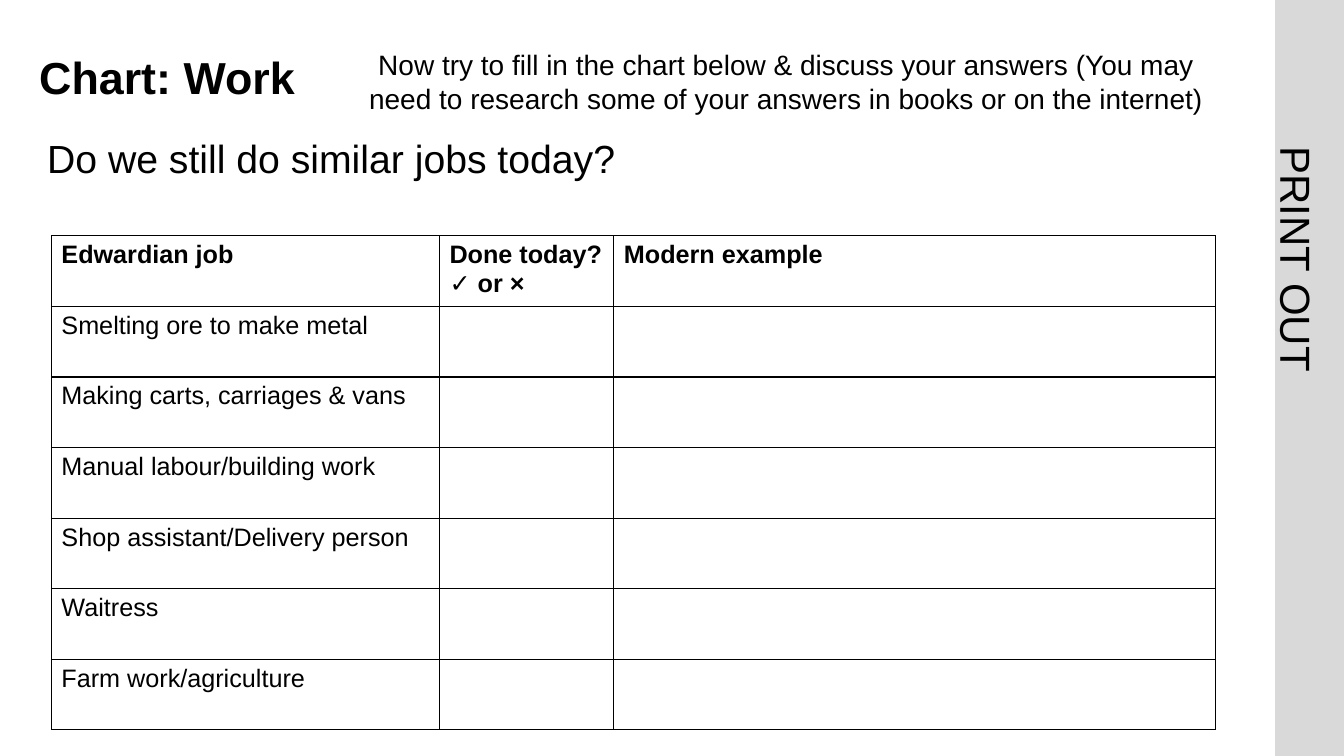
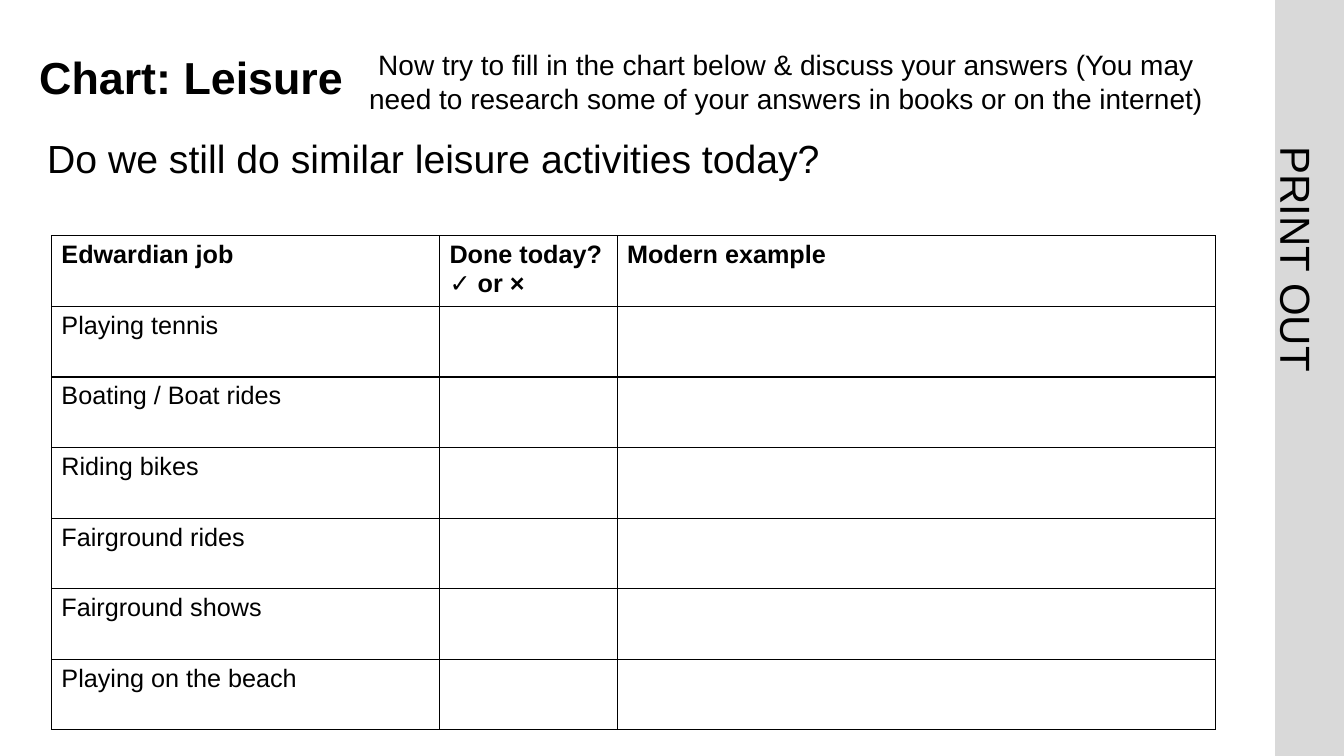
"""Build the two print-out worksheets on Edwardian work and leisure."""
from dataclasses import dataclass
from typing import Any

from lxml import etree
from pptx import Presentation
from pptx import util as u
from pptx.dml.color import RGBColor
from pptx.enum import shapes, text
from pptx.oxml import ns

Pt = u.Pt
FONT = "Arial"
BLACK = "000000"
GREY = "D9D9D9"
SLIDE_WIDTH, SLIDE_HEIGHT = 960, 540
BAND_WIDTH = 49.2
TABLE_LEFT, TABLE_TOP, TABLE_WIDTH = 36.7, 168.5, 831.8
JOB_WIDTH, ROW_HEIGHT = 277.2, 50.4
HEADINGS = ("Edwardian job", "Done today?\n✓ or ×", "Modern example")
INSTRUCTION = (
    "Now try to fill in the chart below & discuss your answers "
    "(You may need to research some of your answers in books or on the internet)"
)


@dataclass(frozen=True)
class Box:
    """A rectangle in points."""

    left: float
    top: float
    width: float
    height: float

    def lengths(self) -> tuple[u.Length, ...]:
        """Return left, top, width and height as lengths."""
        return tuple(Pt(n) for n in (self.left, self.top, self.width, self.height))


@dataclass(frozen=True)
class Worksheet:
    """The content that differs between the slides."""

    title: str
    question: str
    question_width: float
    done_width: float
    activities: tuple[str, ...]


WORKSHEETS = (
    Worksheet(
        "Chart: Work",
        "Do we still do similar jobs today?",
        483,
        124.6,
        (
            "Smelting ore to make metal",
            "Making carts, carriages & vans",
            "Manual labour/building work",
            "Shop assistant/Delivery person",
            "Waitress",
            "Farm work/agriculture",
        ),
    ),
    Worksheet(
        "Chart: Leisure",
        "Do we still do similar leisure activities today?",
        624,
        126.9,
        (
            "Playing tennis",
            "Boating / Boat rides",
            "Riding bikes",
            "Fairground rides",
            "Fairground shows",
            "Playing on the beach",
        ),
    ),
)


def colour(value: str) -> RGBColor:
    """Turn a hex string into a colour."""
    return RGBColor.from_string(value)


def write(frame: Any, words: str, size: float, bold: bool = False,
          align: Any = text.PP_ALIGN.LEFT) -> None:
    """Fill a text frame with evenly formatted paragraphs."""
    frame.text = words
    for paragraph in frame.paragraphs:
        paragraph.alignment = align
        font = paragraph.font
        font.name, font.size, font.bold = FONT, Pt(size), bold
        font.color.rgb = colour(BLACK)


def add_text(slide: Any, box: Box, words: str, size: float,
             align: Any = text.PP_ALIGN.LEFT) -> Any:
    """Add a wrapping text box and return it."""
    label = slide.shapes.add_textbox(*box.lengths())
    label.text_frame.word_wrap = True
    write(label.text_frame, words, size, align=align)
    return label


def move_to_layout(slide: Any, *parts: Any) -> None:
    """Move parts drawn on a slide to its layout, so that all slides share them."""
    for part in parts:
        slide.slide_layout.shapes.element.append(part.element)


def add_print_band(slide: Any) -> None:
    """Put the grey band with its sideways label on the layout."""
    band = slide.shapes.add_shape(
        shapes.MSO_SHAPE.RECTANGLE,
        *Box(SLIDE_WIDTH - BAND_WIDTH, 0, BAND_WIDTH, SLIDE_HEIGHT).lengths())
    band.shadow.inherit = False
    band.fill.solid()
    band.fill.fore_color.rgb = colour(GREY)
    band.line.fill.background()

    print_out = add_text(slide, Box(797, 159.2, 288.8, 51.8), "PRINT OUT", 30,
                         text.PP_ALIGN.CENTER)
    print_out.rotation = 90
    frame = print_out.text_frame
    frame.margin_left = frame.margin_right = frame.margin_top = frame.margin_bottom = 0
    frame.paragraphs[0].line_spacing = Pt(58.8)
    move_to_layout(slide, band, print_out)


def set_title(slide: Any, words: str) -> None:
    """Place and format the slide title."""
    title = slide.shapes.title
    title.left, title.top, title.width, title.height = Box(28, 28.8, 866, 56.2).lengths()
    frame = title.text_frame
    write(frame, words, 32, bold=True)
    frame.auto_size = text.MSO_AUTO_SIZE.NONE
    frame.vertical_anchor = text.MSO_ANCHOR.MIDDLE
    frame.margin_left = 0
    frame.paragraphs[0].line_spacing = 0.9


def outline_cell(cell: Any) -> None:
    """Draw a thin black border round a cell and clear its fill."""
    properties = cell._tc.get_or_add_tcPr()
    for side in ("lnL", "lnR", "lnT", "lnB"):
        border = etree.SubElement(properties, ns.qn(f"a:{side}"), w=str(Pt(1)))
        fill = etree.SubElement(border, ns.qn("a:solidFill"))
        etree.SubElement(fill, ns.qn("a:srgbClr"), val=BLACK)
    cell.fill.background()


def add_answer_table(slide: Any, sheet: Worksheet) -> None:
    """Add the table that pupils fill in."""
    rows = [HEADINGS, *((activity, "", "") for activity in sheet.activities)]
    box = Box(TABLE_LEFT, TABLE_TOP, TABLE_WIDTH, ROW_HEIGHT * len(rows))
    answers = slide.shapes.add_table(len(rows), len(HEADINGS), *box.lengths()).table
    answers.horz_banding = False
    widths = (JOB_WIDTH, sheet.done_width, TABLE_WIDTH - JOB_WIDTH - sheet.done_width)
    for column, width in zip(answers.columns, widths):
        column.width = Pt(width)
    for r, row in enumerate(rows):
        answers.rows[r].height = Pt(ROW_HEIGHT)
        for c, words in enumerate(row):
            cell = answers.cell(r, c)
            outline_cell(cell)
            write(cell.text_frame, words, 18, bold=r == 0)


def add_worksheet(slide: Any, sheet: Worksheet) -> None:
    """Draw one worksheet on its slide."""
    set_title(slide, sheet.title)
    instruction = add_text(slide, Box(241.2, 35.3, 640.8, 45.4), INSTRUCTION, 20,
                           text.PP_ALIGN.CENTER)
    instruction.text_frame.vertical_anchor = text.MSO_ANCHOR.MIDDLE
    add_text(slide, Box(26.6, 92.2, sheet.question_width, 41), sheet.question, 28)
    add_answer_table(slide, sheet)


def main() -> None:
    """Build and save the presentation."""
    deck = Presentation()
    deck.slide_width, deck.slide_height = Pt(SLIDE_WIDTH), Pt(SLIDE_HEIGHT)
    title_only = deck.slide_layouts[5]
    slides = [deck.slides.add_slide(title_only) for _ in WORKSHEETS]
    add_print_band(slides[0])
    for slide, sheet in zip(slides, WORKSHEETS):
        add_worksheet(slide, sheet)
    deck.save("out.pptx")


if __name__ == "__main__":
    main()
